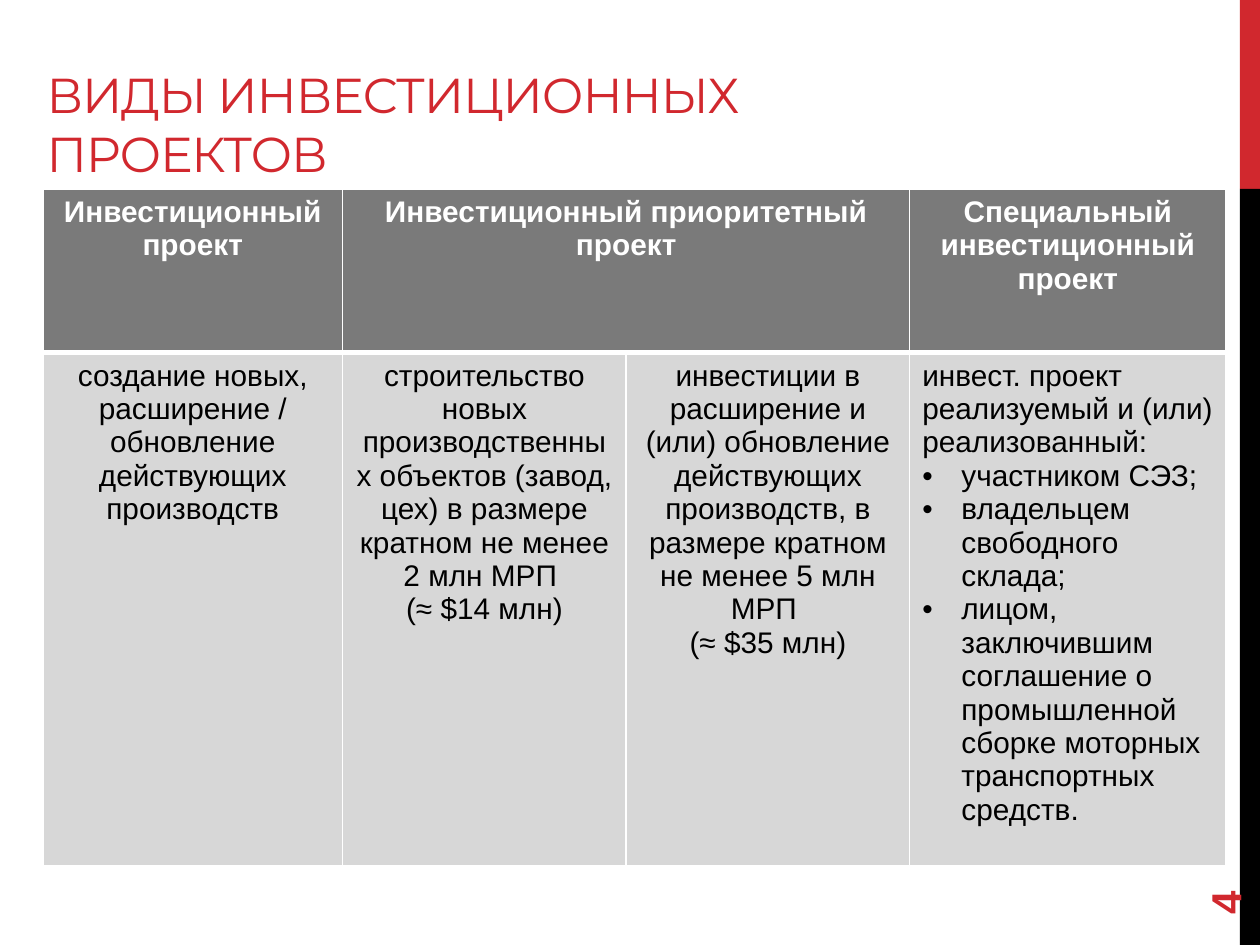
from pptx import Presentation
from pptx.dml.color import RGBColor
from pptx.enum.shapes import MSO_SHAPE as SHAPE
from pptx.enum.text import MSO_ANCHOR as ANCHOR, MSO_AUTO_SIZE as AUTO, PP_ALIGN as ALIGN
from pptx.oxml.ns import qn
from pptx.util import Inches, Pt
from lxml.etree import SubElement

RED, BLACK, WHITE, GRAY, LIGHT = "D1282E", "000000", "FFFFFF", "7A7A7A", "D7D7D7"

TITLE = "ВИДЫ ИНВЕСТИЦИОННЫХ ПРОЕКТОВ"
NUMBER = "4"
BARS = [(0, 1.5, RED), (1.5, 6, BLACK)]
HEADERS = [
    (0, "Инвестиционный проект"),
    (1, "Инвестиционный приоритетный проект"),
    (3, "Специальный инвестиционный проект"),
]
BODY = [
    ["создание новых, расширение / обновление действующих производств"],
    ["строительство новых производственных объектов (завод, цех) в размере "
     "кратном не менее 2 млн МРП ", "(≈ $14 млн)"],
    ["инвестиции в расширение и (или) обновление действующих производств, "
     "в размере кратном не менее 5 млн МРП ", "(≈ $35 млн)"],
]
SPECIAL = "инвест. проект реализуемый и (или) реализованный:"
SPECIAL_ITEMS = [
    "участником СЭЗ;",
    "владельцем свободного склада;",
    "лицом, заключившим соглашение о промышленной сборке моторных транспортных средств.",
]
COLS = [2.38, 2.25, 2.25, 2.51]
ROWS = [1.3, 4.07]


def rgb(value):
    return RGBColor.from_string(value)


def add_run(p, text, size, color, bold=False, font="Arial"):
    r = p.add_run()
    r.text = text
    r.font.name, r.font.size, r.font.bold = font, Pt(size), bold
    r.font.color.rgb = rgb(color)
    return r


def set_borders(cell, top, bottom):
    tcPr = cell._tc.get_or_add_tcPr()
    for side, width in (("L", 1), ("R", 1), ("T", top), ("B", bottom)):
        ln = SubElement(tcPr, qn(f"a:ln{side}"), w=str(Pt(width)))
        SubElement(SubElement(ln, qn("a:solidFill")), qn("a:srgbClr"), val=WHITE)


def add_bullet(p):
    pPr = p._p.get_or_add_pPr()
    pPr.set("marL", str(Inches(0.31)))
    pPr.set("indent", str(-Inches(0.31)))
    SubElement(pPr, qn("a:buFont"), typeface="Arial")
    SubElement(pPr, qn("a:buChar"), char="•")


def fill_cell(cell, texts, color, bold=False, align=ALIGN.CENTER, bullets_from=None):
    tf = cell.text_frame
    for i, text in enumerate(texts):
        p = tf.add_paragraph() if i else tf.paragraphs[0]
        p.alignment = align
        if bullets_from is not None and i >= bullets_from:
            add_bullet(p)
        add_run(p, text, 17, color, bold)


prs = Presentation()
prs.slide_width, prs.slide_height = Inches(10), Inches(7.5)
s = prs.slides.add_slide(prs.slide_layouts[5])

for top, height, color in BARS:
    sp = s.shapes.add_shape(SHAPE.RECTANGLE, Inches(9.84), Inches(top), Inches(0.16), Inches(height))
    sp.shadow.inherit = False
    sp.fill.solid()
    sp.fill.fore_color.rgb = rgb(color)
    sp.line.fill.background()

title = s.shapes.title
title.left, title.top, title.width, title.height = Inches(0.27), Inches(0), Inches(6.33), Inches(1.5)
tf = title.text_frame
tf.word_wrap, tf.auto_size, tf.vertical_anchor = True, AUTO.NONE, ANCHOR.BOTTOM
p = tf.paragraphs[0]
p.alignment = ALIGN.LEFT
r = add_run(p, TITLE, 28, RED, font="Montserrat")
r.font._element.set("spc", "-60")

table = s.shapes.add_table(len(ROWS), len(COLS), Inches(0.34), Inches(1.5),
                           Inches(sum(COLS)), Inches(sum(ROWS))).table
for col, width in zip(table.columns, COLS):
    col.width = Inches(width)
for row, height in zip(table.rows, ROWS):
    row.height = Inches(height)
for i, (top, bottom, color) in enumerate([(1, 3, GRAY), (3, 1, LIGHT)]):
    for cell in table.rows[i].cells:
        set_borders(cell, top, bottom)
        cell.fill.solid()
        cell.fill.fore_color.rgb = rgb(color)
table.cell(0, 1).merge(table.cell(0, 2))

for col, text in HEADERS:
    fill_cell(table.cell(0, col), [text], WHITE, bold=True)
for col, texts in enumerate(BODY):
    fill_cell(table.cell(1, col), texts, BLACK)
fill_cell(table.cell(1, 3), [SPECIAL, *SPECIAL_ITEMS], BLACK, align=ALIGN.LEFT, bullets_from=1)

number = s.shapes.add_textbox(Inches(9), Inches(6.44), Inches(1.44), Inches(0.4))
number.rotation = 270
tf = number.text_frame
tf.word_wrap, tf.vertical_anchor = True, ANCHOR.MIDDLE
add_run(tf.paragraphs[0], NUMBER, 24, RED, bold=True)

prs.save("out.pptx")
